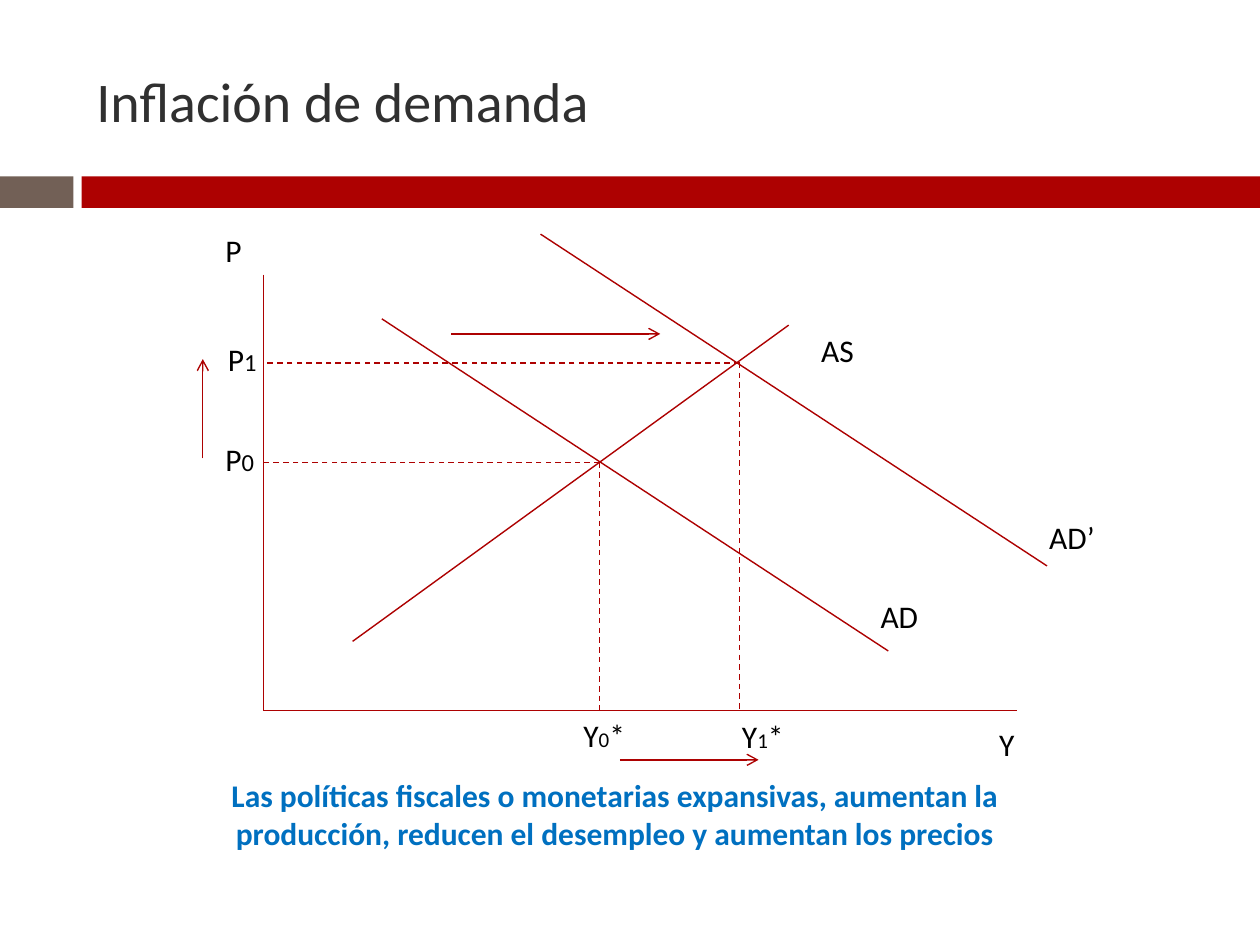
from lxml import etree
from pptx import Presentation
from pptx.dml.color import RGBColor
from pptx.enum.dml import MSO_LINE
from pptx.enum.shapes import MSO_CONNECTOR, MSO_SHAPE
from pptx.enum.text import MSO_ANCHOR, PP_ALIGN
from pptx.oxml.ns import qn
from pptx.util import Pt

HEX = {"red": "AD0101", "taupe": "726056", "title": "303030",
       "blue": "0070C0", "black": "000000"}


def color(name):
    return RGBColor.from_string(HEX[name])


def add_text(slide, box, runs, tint="black", bold=False,
             align=PP_ALIGN.LEFT, anchor=MSO_ANCHOR.TOP):
    """Write (text, size) runs as one paragraph in box."""
    frame = slide.shapes.add_textbox(*map(Pt, box)).text_frame
    frame.word_wrap = True
    frame.vertical_anchor = anchor
    para = frame.paragraphs[0]
    para.alignment = align
    for text, size in runs:
        run = para.add_run()
        run.text = text
        run.font.name = "Calibri"
        run.font.size = Pt(size)
        run.font.bold = bold
        run.font.color.rgb = color(tint)


def add_line(slide, start, end, dash=False, arrow=False):
    line = slide.shapes.add_connector(
        MSO_CONNECTOR.STRAIGHT, *map(Pt, (*start, *end)))
    line.line.color.rgb = color("red")
    line.line.width = Pt(0.79)
    if dash:
        line.line.dash_style = MSO_LINE.DASH
    props = line._element.spPr
    if arrow:
        etree.SubElement(props.find(qn("a:ln")), qn("a:tailEnd"), type="arrow")
    etree.SubElement(props, qn("a:effectLst"))


def add_band(slide, left, top, width, height):
    """Draw the short taupe block and the long red bar across the box."""
    block, gap = 42, 4.7
    start = block + gap
    for x, span, tint in ((0, block, "taupe"), (start, width - start, "red")):
        bar = slide.shapes.add_shape(
            MSO_SHAPE.RECTANGLE, Pt(left + x), Pt(top), Pt(span), Pt(height))
        bar.shadow.inherit = False
        bar.fill.solid()
        bar.fill.fore_color.rgb = color(tint)
        bar.line.fill.background()


def add_graph(slide, left, top, width, height):
    """Draw supply and demand, with the axes on the box's left and bottom."""
    def at(x, y):
        return left + x, top + y

    def draw(start, end, **style):
        add_line(slide, at(*start), at(*end), **style)

    draw((0, 0), (0, height))
    draw((0, height), (width, height))

    curves = (
        ((51, 209.5), (300.2, 28.8)),       # AS
        ((67.7, 25.2), (357.1, 215)),       # AD
        ((158.4, -23.2), (447.8, 166.4)),   # AD’
    )
    for start, end in curves:
        draw(start, end)

    for x, y in ((192.2, 107.2), (272.2, 50.4)):
        draw((x, y), (0, y), dash=True)
        draw((x, y), (x, height), dash=True)

    shifts = (
        ((107.3, 33.8), (226.8, 33.8)),     # demand
        ((-34.6, 105), (-34.6, 48.2)),      # prices
        ((203.8, 277.2), (283, 277.2)),     # output
    )
    for start, end in shifts:
        draw(start, end, arrow=True)

    labels = (
        (-28.8, -28.8, 45, [("P", 18)]),
        (413.3, 254, 34, [("Y", 18)]),
        (311.7, 28.8, 73, [("AS", 18)]),
        (345.6, 180.7, 108, [("AD", 18)]),
        (442, 135.3, 108, [("AD’", 18)]),
        (-27.4, 33.8, 45, [("P", 18), ("1", 14)]),
        (-28.8, 90.7, 45, [("P", 18), ("0", 14)]),
        (175.7, 248.4, 57, [("Y", 18), ("0", 12), ("*", 18)]),
        (266.4, 249, 57, [("Y", 18), ("1", 12), ("*", 18)]),
    )
    for x, y, span, runs in labels:
        add_text(slide, (*at(x, y), span, 29), runs)


def main():
    deck = Presentation()
    deck.slide_width, deck.slide_height = Pt(720), Pt(540)
    slide = deck.slides.add_slide(deck.slide_layouts[6])
    add_band(slide, 0, 100.8, 720, 18)
    add_text(slide, (48, 18, 642, 78), [("Inflación de demanda", 32)],
             tint="title", anchor=MSO_ANCHOR.MIDDLE)
    add_graph(slide, 150.5, 157, 430.5, 249)
    add_text(slide, (105, 440, 493, 51),
             [("Las políticas fiscales o monetarias expansivas, aumentan la "
               "producción, reducen el desempleo y aumentan los precios", 18)],
             tint="blue", bold=True, align=PP_ALIGN.CENTER)
    deck.save("out.pptx")


if __name__ == "__main__":
    main()
